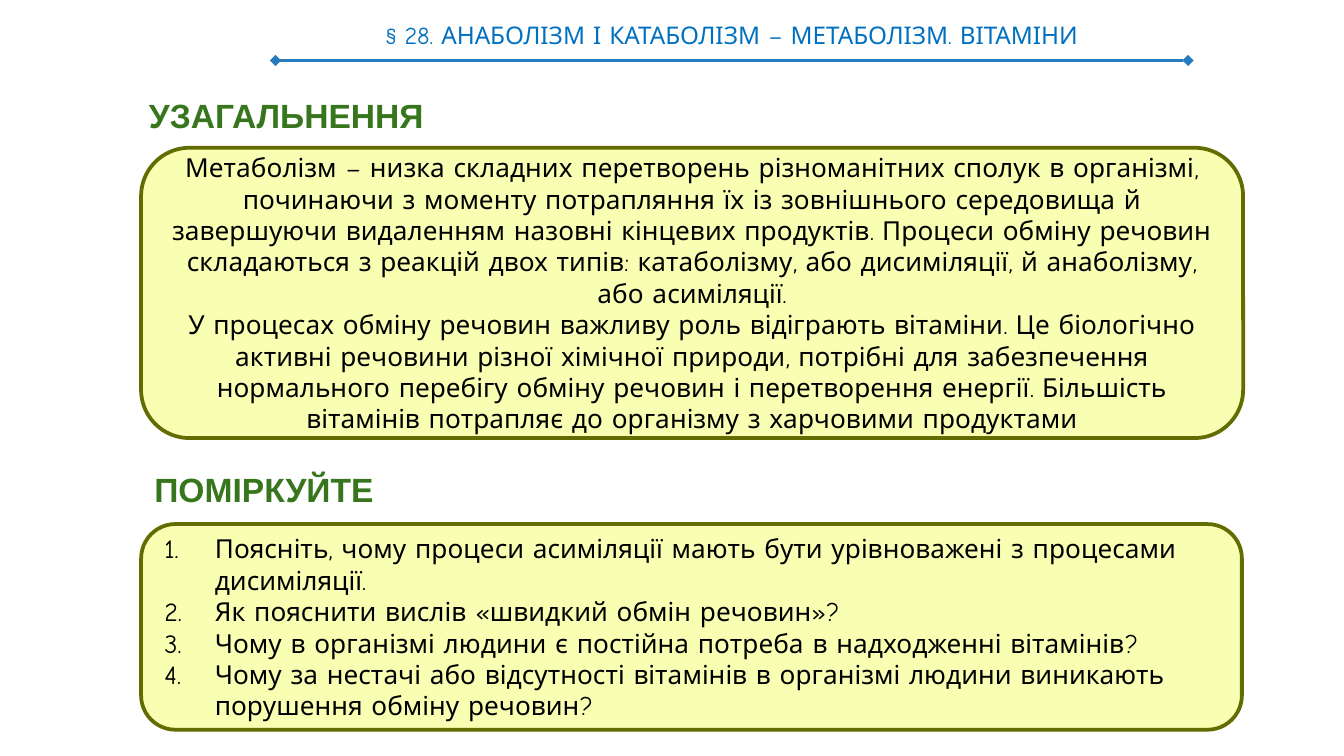
from dataclasses import dataclass

from lxml.etree import SubElement
from pptx import Presentation
from pptx.dml.color import RGBColor
from pptx.enum.shapes import MSO_CONNECTOR, MSO_SHAPE
from pptx.enum.text import MSO_ANCHOR, PP_ALIGN
from pptx.oxml.ns import qn
from pptx.slide import Slide
from pptx.text.text import TextFrame
from pptx.util import Emu, Inches, Pt


@dataclass(frozen=True)
class Theme:
    head: str = "Arial"
    body: str = "Comic Neue"
    green: str = "38761D"
    blue: str = "0070C0"
    rule: str = "257BBE"
    fill: str = "F8FFB3"
    edge: str = "626C00"
    ink: str = "000000"
    big: float = 18
    mid: float = 14
    small: float = 13


@dataclass(frozen=True)
class Area:
    """Place on the grid, in columns and rows."""
    col: float
    row: float
    wide: float
    high: float


@dataclass(frozen=True)
class Part:
    """A heading with a rounded panel below it."""
    title: str
    top: Area
    panel: Area
    lines: tuple[str, ...]
    listed: bool = False


THEME = Theme()
CELL = Inches(0.1)  # side of one grid square
COLS, ROWS = 100, 56.25


def span(count: float) -> Emu:
    return Emu(round(count * CELL))


def place(area: Area) -> tuple[Emu, ...]:
    return tuple(span(n) for n in (area.col, area.row, area.wide, area.high))


def color(code: str) -> RGBColor:
    return RGBColor.from_string(code)


def write(frame: TextFrame, *lines: str, font: str = THEME.body,
          size: float = THEME.mid, ink: str = THEME.ink, bold: bool = False,
          align: PP_ALIGN = PP_ALIGN.LEFT, listed: bool = False) -> None:
    frame.word_wrap = True
    for i, line in enumerate(lines):
        para = frame.paragraphs[0] if i == 0 else frame.add_paragraph()
        para.alignment = align
        if listed:
            props = para._p.get_or_add_pPr()
            props.set("marL", str(span(3.75)))
            props.set("indent", str(-span(3.75)))
            tint = SubElement(props, qn("a:buClr"))
            SubElement(tint, qn("a:srgbClr"), val=ink)
            SubElement(props, qn("a:buAutoNum"), type="arabicPeriod")
        run = para.add_run()
        run.text = line
        run.font.name = font
        run.font.size = Pt(size)
        run.font.bold = bold
        run.font.color.rgb = color(ink)


def label(slide: Slide, area: Area, text: str, **style) -> None:
    frame = slide.shapes.add_textbox(*place(area)).text_frame
    frame.margin_left = frame.margin_right = CELL
    frame.margin_top = frame.margin_bottom = CELL
    write(frame, text, **style)


def panel(slide: Slide, part: Part) -> None:
    box = slide.shapes.add_shape(MSO_SHAPE.ROUNDED_RECTANGLE, *place(part.panel))
    box.shadow.inherit = False
    box.fill.solid()
    box.fill.fore_color.rgb = color(THEME.fill)
    box.line.color.rgb = color(THEME.edge)
    box.line.width = Pt(2)
    box.text_frame.vertical_anchor = MSO_ANCHOR.MIDDLE
    align = PP_ALIGN.LEFT if part.listed else PP_ALIGN.CENTER
    write(box.text_frame, *part.lines, align=align, listed=part.listed)


def rule(slide: Slide, left: float, right: float, row: float) -> None:
    line = slide.shapes.add_connector(
        MSO_CONNECTOR.STRAIGHT, span(left), span(row), span(right), span(row))
    line.line.color.rgb = color(THEME.rule)
    line.line.width = Pt(1.5)
    stroke = line.line._get_or_add_ln()
    for end in ("a:headEnd", "a:tailEnd"):
        SubElement(stroke, qn(end), type="diamond")
    SubElement(line._element.spPr, qn("a:effectLst"))


PARTS = (
    Part("УЗАГАЛЬНЕННЯ", Area(10.1, 6.1, 56.2, 5), Area(10.5, 11, 82, 21.6), (
        "Метаболізм – низка складних перетворень різноманітних сполук в "
        "організмі, починаючи з моменту потрапляння їх із зовнішнього "
        "середовища й завершуючи видаленням назовні кінцевих продуктів. "
        "Процеси обміну речовин складаються з реакцій двох типів: "
        "катаболізму, або дисиміляції, й анаболізму, або асиміляції.",
        "У процесах обміну речовин важливу роль відіграють вітаміни. Це "
        "біологічно активні речовини різної хімічної природи, потрібні для "
        "забезпечення нормального перебігу обміну речовин і перетворення "
        "енергії. Більшість вітамінів потрапляє до організму з харчовими "
        "продуктами",
    )),
    Part("ПОМІРКУЙТЕ", Area(10.5, 33.9, 56.2, 5), Area(10.5, 39, 81.9, 15.3), (
        "Поясніть, чому процеси асиміляції мають бути урівноважені з "
        "процесами дисиміляції.",
        "Як пояснити вислів «швидкий обмін речовин»?",
        "Чому в організмі людини є постійна потреба в надходженні вітамінів?",
        "Чому за нестачі або відсутності вітамінів в організмі людини "
        "виникають порушення обміну речовин?",
    ), listed=True),
)


def main() -> None:
    deck = Presentation()
    deck.slide_width, deck.slide_height = span(COLS), span(ROWS)
    slide = deck.slides.add_slide(deck.slide_layouts[6])

    # Running title over its rule
    rule(slide, 20.5, 88.4, 4.5)
    label(slide, Area(20, 0.5, 68.9, 4.2),
          "§ 28. АНАБОЛІЗМ І КАТАБОЛІЗМ – МЕТАБОЛІЗМ. ВІТАМІНИ",
          size=THEME.small, ink=THEME.blue, align=PP_ALIGN.CENTER)

    # Headings and panels
    for part in PARTS:
        label(slide, part.top, part.title, font=THEME.head, size=THEME.big,
              ink=THEME.green, bold=True)
        panel(slide, part)

    deck.save("out.pptx")


if __name__ == "__main__":
    main()
